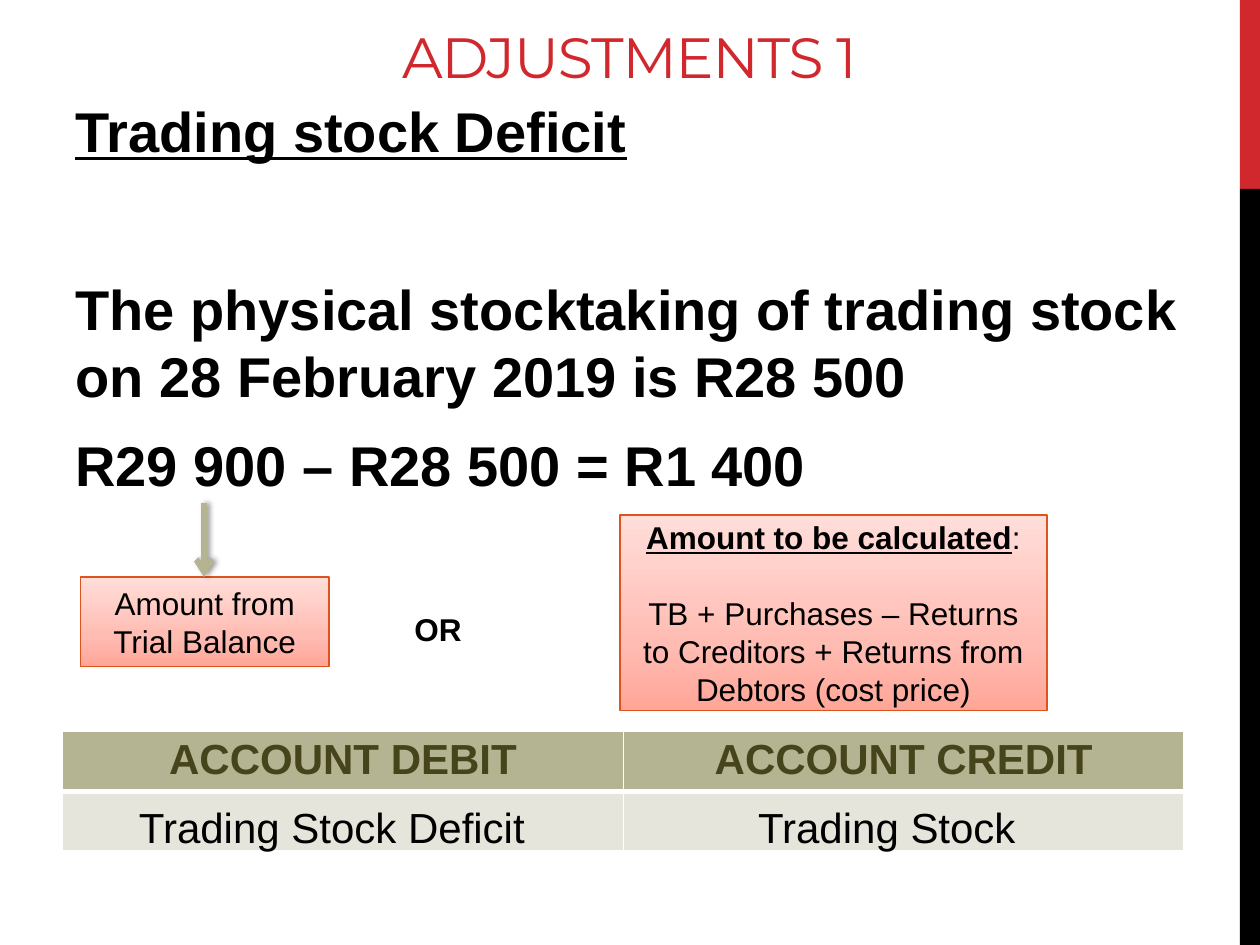
"""Build the trading stock deficit adjustment slide."""
from lxml import etree
from pptx import Presentation
from pptx.dml.color import RGBColor
from pptx.enum import shapes, text
from pptx.oxml import ns
from pptx.util import Pt

RED = RGBColor(0xD1, 0x28, 0x2E)
BLACK = RGBColor(0, 0, 0)
WHITE = RGBColor(0xFF, 0xFF, 0xFF)
SAGE = RGBColor(0xB4, 0xB3, 0x92)
PALE = RGBColor(0xE5, 0xE5, 0xDC)
OLIVE = RGBColor(0x45, 0x44, 0x1B)
RUST = RGBColor(0xDC, 0x55, 0x1F)
CORAL = RGBColor(0xFF, 0xA6, 0x98)
SALMON = RGBColor(0xFF, 0xBC, 0xB3)
BLUSH = RGBColor(0xFF, 0xDE, 0xD9)
MID = text.PP_ALIGN.CENTER
LEFT = text.PP_ALIGN.LEFT


def style(frame, size, color=BLACK, bold=False, align=MID, font="Arial", pitch=None):
    frame.word_wrap = True
    for para in frame.paragraphs:
        para.alignment = align
        para.line_spacing = pitch
        for run in para.runs:
            run.font.name, run.font.size = font, Pt(size)
            run.font.bold = bold
            run.font.color.rgb = color


def node(root, tag, **attrs):
    return etree.SubElement(root, ns.qn(tag), attrs)


prs = Presentation()
prs.slide_width, prs.slide_height = Pt(720), Pt(540)
slide = prs.slides.add_slide(prs.slide_layouts[6])
items = slide.shapes

for top, high, color in [(0, 108, RED), (108, 432, BLACK)]:
    bar = items.add_shape(shapes.MSO_SHAPE.RECTANGLE, Pt(708.5), Pt(top), Pt(11.5), Pt(high))
    bar.shadow.inherit = False
    bar.fill.solid()
    bar.fill.fore_color.rgb = color
    bar.line.fill.background()

title = items.add_textbox(Pt(36), Pt(12.2), Pt(647.3), Pt(42.5)).text_frame
title.text = "ADJUSTMENTS 1"
title.vertical_anchor = text.MSO_ANCHOR.BOTTOM
style(title, 32.4, RED, font="Montserrat")
title.paragraphs[0].runs[0].font._element.set("spc", "-60")

body = items.add_textbox(Pt(36), Pt(51.8), Pt(647.3), Pt(256.3)).text_frame
body.text = "\n".join([
    "Trading stock Deficit",
    "The physical stocktaking of trading stock on 28 February 2019 is R28\u00a0500",
    "R29\u00a0900 – R28\u00a0500 = R1 400",
])
style(body, 32, bold=True, align=LEFT, pitch=Pt(38.3))
for para, gap in zip(body.paragraphs, [0, 57.4, 6.4]):
    para.space_before, para.space_after = Pt(gap), Pt(6)
body.paragraphs[0].runs[0].font.underline = True

grid = items.add_table(2, 2, Pt(35.8), Pt(417.6), Pt(640.8), Pt(67.4)).table
for col, head in enumerate(["ACCOUNT DEBIT", "ACCOUNT CREDIT"]):
    grid.cell(0, col).text = head
    style(grid.cell(0, col).text_frame, 24, OLIVE, True)
for row, (color, base) in enumerate([(SAGE, 3), (PALE, 1)]):
    grid.rows[row].height = Pt(33.7)
    for cell in grid.rows[row].cells:
        cell.margin_top = cell.margin_bottom = Pt(3)
        edges = [("L", 1), ("R", 1), ("T", 1 if row == 0 else 3), ("B", base)]
        for side, width in edges:
            edge = node(cell._tc.get_or_add_tcPr(), f"a:ln{side}", w=str(Pt(width)))
            node(node(edge, "a:solidFill"), "a:srgbClr", val=str(WHITE))
        cell.fill.solid()
        cell.fill.fore_color.rgb = color

labels = [
    ("Trading Stock Deficit", 33.8, 454.3, 311.8, 36, 24, False, MID),
    ("Trading Stock ", 354.2, 454.3, 311.8, 36, 24, False, MID),
    ("OR", 229.7, 344.9, 45.4, 28.8, 18, True, LEFT),
]
for words, left, top, wide, high, size, bold, align in labels:
    label = items.add_textbox(Pt(left), Pt(top), Pt(wide), Pt(high)).text_frame
    label.text = words
    style(label, size, bold=bold, align=align)

notes = [
    ("Amount from Trial Balance", 46.1, 329.8, 141.8, 51.1),
    ("Amount to be calculated\nTB + Purchases – Returns to Creditors + Returns from "
     "Debtors (cost price)", 354.2, 294.5, 244.1, 111.6),
]
for words, left, top, wide, high in notes:
    note = items.add_shape(shapes.MSO_SHAPE.RECTANGLE, Pt(left), Pt(top), Pt(wide), Pt(high))
    note.shadow.inherit = False
    note.line.color.rgb, note.line.width = RUST, Pt(1)
    note.fill.gradient()
    note.fill.gradient_angle = 90
    stops = note._element.spPr.find(ns.qn("a:gradFill")).find(ns.qn("a:gsLst"))
    stops.clear()
    for place, color in [(0, CORAL), (35, SALMON), (100, BLUSH)]:
        node(node(stops, "a:gs", pos=str(place * 1000)), "a:srgbClr", val=str(color))
    frame = note.text_frame
    frame.text = words
    frame.vertical_anchor = text.MSO_ANCHOR.MIDDLE
    style(frame, 18, pitch=Pt(21.7))

lead, sums = frame.paragraphs
sums.space_before = Pt(21.7)
lead.runs[0].font.bold = lead.runs[0].font.underline = True
colon = lead.add_run()
colon.text = ":"
colon.font.name, colon.font.size = "Arial", Pt(18)
colon.font.color.rgb = BLACK

arrow = items.add_connector(shapes.MSO_CONNECTOR.STRAIGHT, Pt(116.6), Pt(287.3), Pt(116.6), Pt(329.8))
arrow.line.color.rgb, arrow.line.width = SAGE, Pt(3.25)
node(arrow.line._get_or_add_ln(), "a:tailEnd", type="arrow")
glow = node(node(arrow._element.spPr, "a:effectLst"), "a:outerShdw",
            blurRad=str(Pt(3.1)), dist=str(Pt(1.8)), dir="0")
node(node(glow, "a:srgbClr", val=str(BLACK)), "a:alpha", val="40000")

prs.save("out.pptx")
